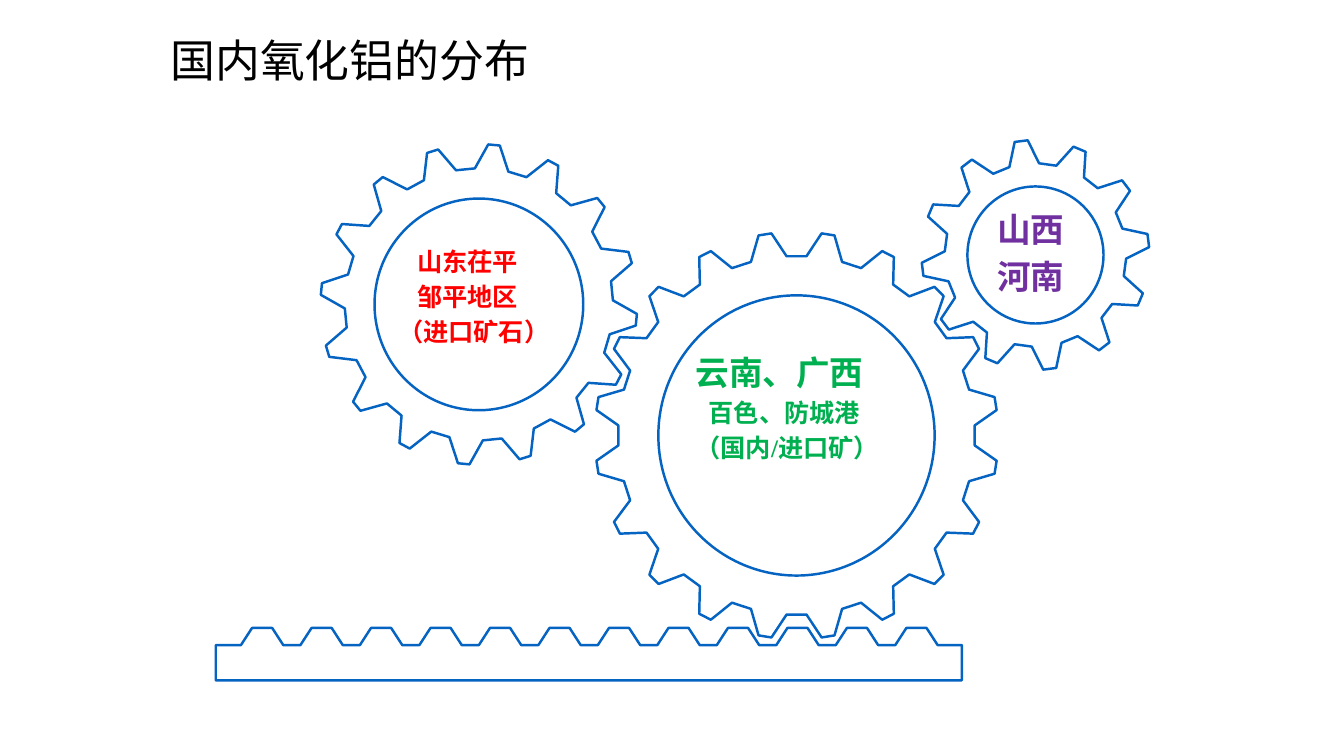
from math import cos, radians, sin

from pptx import Presentation
from pptx.dml.color import RGBColor
from pptx.enum.shapes import MSO_SHAPE
from pptx.enum.text import MSO_ANCHOR, PP_ALIGN
from pptx.util import Inches, Pt

OVAL = MSO_SHAPE.OVAL
MIDDLE = MSO_ANCHOR.MIDDLE
LEFT = PP_ALIGN.LEFT
FONT = "Times New Roman"
BLUE, BLACK, RED, GREEN, PURPLE = "0563C1", "000000", "FF0000", "00B050", "7030A0"


def rgb(value):
    """Return the colour for a hex string."""
    return RGBColor.from_string(value)


def outline(shape):
    """Give a shape the blue outline, with no fill and no shadow."""
    shape.shadow.inherit = False
    shape.fill.background()
    shape.line.color.rgb = rgb(BLUE)
    shape.line.width = Pt(1.75)


def polygon(s, points):
    """Draw a closed outline through points given in inches."""
    points = [(Inches(x), Inches(y)) for x, y in points]
    builder = s.shapes.build_freeform(*points[0])
    builder.add_line_segments(points[1:], close=True)
    outline(builder.convert_to_shape())


def gear(s, cx, cy, teeth, phase, tip, root, hub):
    """Draw a gear; tip and root are (x radius, y radius, half angle)."""
    pitch = 360 / teeth
    points = []
    for i in range(teeth):
        middle = phase + i * pitch
        for centre, (rx, ry, half) in ((middle, tip), (middle + pitch / 2, root)):
            for angle in (centre - half, centre + half):
                a = radians(angle)
                points.append((cx + rx * sin(a), cy - ry * cos(a)))
    polygon(s, points)
    w, h = hub
    outline(s.shapes.add_shape(OVAL, Inches(cx - w / 2), Inches(cy - h / 2),
                               Inches(w), Inches(h)))


def rack(s, left, top, right, bottom, teeth):
    """Draw a toothed rack with evenly spaced teeth."""
    base, pitch = top + 0.17, 0.59
    points = [(left, base)]
    for i in range(teeth):
        x = left + 0.25 + i * pitch
        points += [(x, base), (x + 0.11, top), (x + 0.31, top), (x + 0.42, base)]
    polygon(s, points + [(right, base), (right, bottom), (left, bottom)])


def write(p, text, size=18, color=BLACK, bold=False, indent=0, before=0):
    """Write formatted text into a paragraph."""
    p.alignment = LEFT
    p.space_before = Pt(before)
    if indent:
        p._p.get_or_add_pPr().set("marL", str(Inches(indent)))
    r = p.add_run()
    r.text = text
    r.font.name = FONT
    r.font.size = Pt(size)
    r.font.bold = bold
    r.font.color.rgb = rgb(color)


def label(s, x, y, w, h, color, lines):
    """Add a bold label from (text, size, indent) lines."""
    tf = s.shapes.add_textbox(Inches(x), Inches(y), Inches(w), Inches(h)).text_frame
    tf.word_wrap = True
    for i, (text, size, indent) in enumerate(lines):
        p = tf.add_paragraph() if i else tf.paragraphs[0]
        write(p, text, size=size, color=color, bold=True, indent=indent,
              before=size * 0.2)


def title(s, text):
    """Place and fill the title."""
    sp = s.shapes.title
    sp.left, sp.top, sp.width, sp.height = (Inches(v) for v in (1.69, 0.32, 5.46, 0.61))
    tf = sp.text_frame
    tf.margin_left = tf.margin_right = tf.margin_top = tf.margin_bottom = 0
    tf.vertical_anchor = MIDDLE
    p = tf.paragraphs[0]
    p.line_spacing = 0.9
    write(p, text, size=32)


def main():
    """Build and save the slide."""
    prs = Presentation()
    prs.slide_width, prs.slide_height = Inches(13.33), Inches(7.5)
    s = prs.slides.add_slide(prs.slide_layouts[5])
    title(s, "国内氧化铝的分布")

    gear(s, 7.9, 4.32, 20, 9, (2, 2.02, 1.85), (1.77, 1.78, 3.2), (2.74, 2.78))
    gear(s, 10.27, 2.53, 12, -7.2, (1.13, 1.14, 3.3), (0.9, 0.91, 5.5), (1.35, 1.36))
    gear(s, 4.75, 3.02, 16, 5.5, (1.57, 1.59, 2.1), (1.33, 1.35, 4.05), (2.07, 2.1))
    rack(s, 2.14, 6.23, 9.54, 6.75, 12)

    label(s, 3.85, 2.39, 1.73, 1.13, RED,
          [("山东茌平", 18, 0.19), ("邹平地区", 18, 0.19), ("（进口矿石）", 18, 0)])
    label(s, 6.8, 3.44, 2.27, 1.23, GREEN,
          [("云南、广西", 24, 0), ("百色、防城港", 18, 0.13), ("（国内/进口矿）", 18, 0)])
    label(s, 9.79, 2.02, 0.88, 0.99, PURPLE, [("山西", 24, 0), ("河南", 24, 0)])
    prs.save("out.pptx")


if __name__ == "__main__":
    main()
